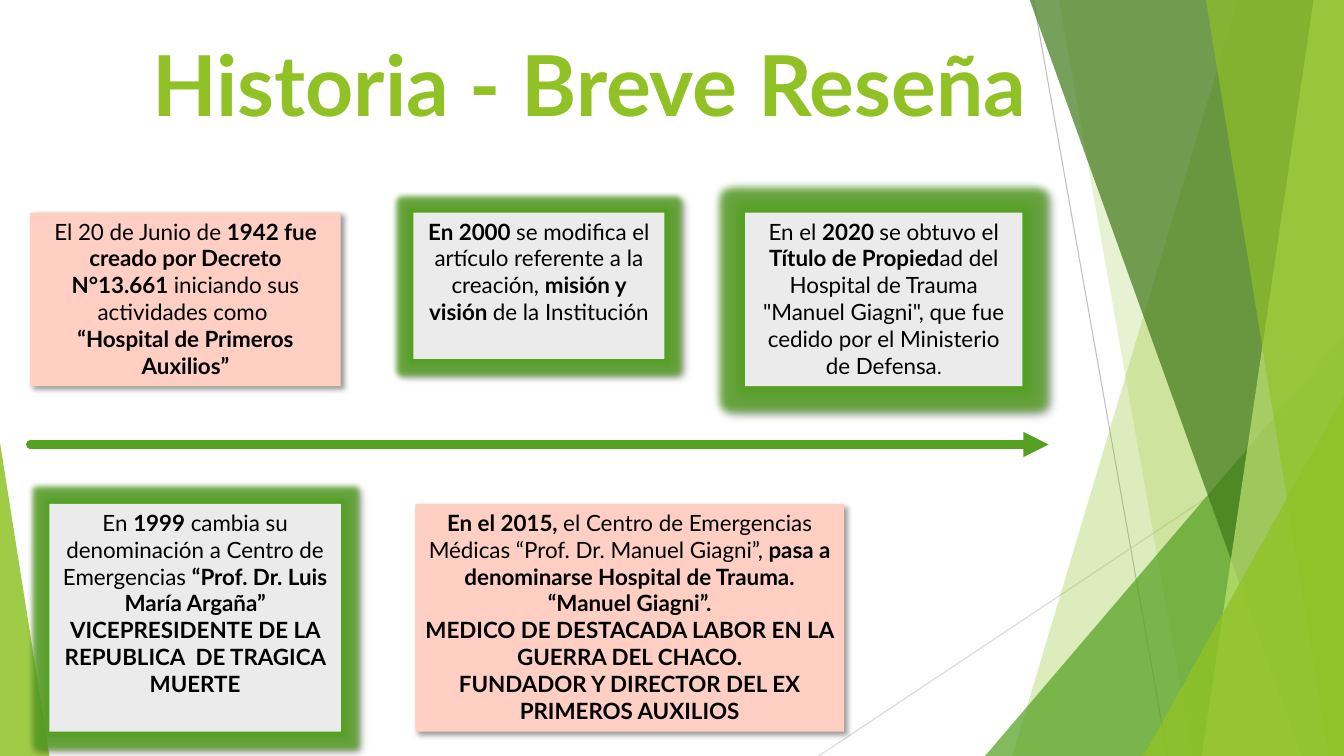
from lxml import etree
from pptx import Presentation
from pptx import util as u
from pptx.dml.color import RGBColor
from pptx.enum import shapes, text
from pptx.oxml import ns

FONT = "Lato"
LIME, GREEN, PINK, GRAY = "90C226", "54A021", "FECFC2", "EBEBEB"
TOP, BOTTOM, RIGHT = -0.01, 7.5, 13.33


def color(value):
    """Turn a hex string into a colour."""
    return RGBColor.from_string(value)


def add_element(parent, tag, **attributes):
    """Append a DrawingML element with the given attributes."""
    element = etree.SubElement(parent, ns.qn(tag))
    for name, value in attributes.items():
        element.set(name, str(value))
    return element


def add_tint(parent, value, opacity):
    """Append a colour with an opacity in percent."""
    tint = add_element(parent, "a:srgbClr", val=value)
    add_element(tint, "a:alpha", val=opacity * 1000)


def paint(shape, fill, opacity=100):
    """Give a shape a plain fill without line or shadow."""
    shape.shadow.inherit = False
    shape.line.fill.background()
    shape.fill.solid()
    shape.fill.fore_color.rgb = color(fill)
    if opacity < 100:
        tint = shape.fill._xPr.find(ns.qn("a:solidFill"))[0]
        add_element(tint, "a:alpha", val=opacity * 1000)


def add_band(slide, points, fill, opacity):
    """Draw a translucent polygon."""
    corners = [(u.Inches(x), u.Inches(y)) for x, y in points]
    builder = slide.shapes.build_freeform(*corners[0])
    builder.add_line_segments(corners[1:], close=True)
    paint(builder.convert_to_shape(), fill, opacity)


def add_triangle(slide, place, apex, fill, opacity):
    """Draw a translucent triangle with its apex at one side."""
    shape = slide.shapes.add_shape(
        shapes.MSO_SHAPE.ISOSCELES_TRIANGLE, *map(u.Inches, place))
    shape.adjustments[0] = apex
    paint(shape, fill, opacity)


def add_line(slide, start, end, line_color, width):
    """Draw a straight line without shadow."""
    line = slide.shapes.add_connector(
        shapes.MSO_CONNECTOR.STRAIGHT, *map(u.Inches, start + end))
    line.line.color.rgb = color(line_color)
    line.line.width = u.Pt(width)
    add_element(line._element.spPr, "a:effectLst")
    return line


def write(frame, paragraphs, size, text_color):
    """Write centred paragraphs made of (text, bold) runs."""
    frame.word_wrap = True
    frame.vertical_anchor = text.MSO_ANCHOR.TOP
    for index, runs in enumerate(paragraphs):
        paragraph = frame.paragraphs[0] if index == 0 else frame.add_paragraph()
        paragraph.alignment = text.PP_ALIGN.CENTER
        for words, bold in runs:
            run = paragraph.add_run()
            run.text = words
            run.font.name = FONT
            run.font.size = u.Pt(size)
            run.font.bold = bold
            run.font.color.rgb = color(text_color)


def add_event(slide, place, fill, paragraphs, glow=0):
    """Draw one event card with a shadow and an optional glow."""
    card = slide.shapes.add_shape(
        shapes.MSO_SHAPE.RECTANGLE, *map(u.Inches, place))
    paint(card, fill)
    effects = card._element.spPr.find(ns.qn("a:effectLst"))
    if glow:
        halo = add_element(effects, "a:glow", rad=u.Pt(glow))
        add_tint(halo, GREEN, 80)
    shadow = add_element(effects, "a:outerShdw", blurRad=u.Pt(4), dist=u.Pt(3),
                         dir=45 * 60000, algn="tl", rotWithShape=0)
    add_tint(shadow, "000000", 40)
    write(card.text_frame, paragraphs, 16, "000000")
    return card


def add_backdrop(slide):
    """Draw the green facets on both sides."""
    add_line(slide, (10.25, 0), (11.58, BOTTOM), "BFBFBF", 0.75)
    add_line(slide, (RIGHT, 4.03), (8.12, BOTTOM), "D9D9D9", 0.75)

    def facet(top_x, bottom_x, fill, opacity):
        add_band(slide, [(top_x, TOP), (RIGHT, TOP), (RIGHT, BOTTOM),
                         (bottom_x, BOTTOM)], fill, opacity)

    facet(12.28, 10.04, LIME, 30)
    facet(10.5, 11.83, LIME, 20)
    add_triangle(slide, (9.77, 3.33, 3.56, 4.17), 1, GREEN, 72)
    facet(10.21, 12.91, "3F7819", 70)
    facet(13.03, 11.92, "C0E474", 70)
    facet(11.96, 13.18, LIME, 65)
    add_triangle(slide, (11.34, 3.93, 1.99, 3.57), 1, LIME, 80)
    add_triangle(slide, (0, 4.39, 0.49, 3.11), 0, LIME, 85)


def add_title(slide, words):
    """Write the slide title."""
    box = slide.shapes.add_textbox(*map(u.Inches, (0.3, 0.27, 11.09, 1.75)))
    write(box.text_frame, [[(words, True)]], 60, LIME)


def add_events(slide):
    """Draw the cards above and below the time line."""
    upper, lower = 2.11, 5
    add_event(slide, (0.3, upper, 3.08, 1.72), PINK, [
        [("El 20 de Junio de ", False),
         ("1942 fue creado por Decreto N°13.661 ", True),
         ("iniciando sus actividades como ", False)],
        [("“Hospital de Primeros Auxilios”", True)]])
    add_event(slide, (0.49, lower, 2.89, 2.26), GRAY, [
        [("En ", False), ("1999", True),
         (" cambia su denominación a Centro de Emergencias ", False),
         ("“Prof. Dr. Luis María Argaña” VICEPRESIDENTE DE LA "
          "REPUBLICA  DE TRAGICA MUERTE", True)]], glow=8)
    add_event(slide, (4.1, upper, 2.49, 1.45), GRAY, [
        [("En 2000 ", True),
         ("se modifica el artículo referente a la creación, ", False),
         ("misión y visión ", True), ("de la Institución", False)]], glow=8)
    add_event(slide, (4.12, lower, 4.25, 2.26), PINK, [
        [("En el 2015, ", True),
         ("el Centro de Emergencias Médicas “Prof. Dr. Manuel Giagni”,", False),
         (" pasa a denominarse Hospital de Trauma. “Manuel Giagni”.", True)],
        [("MEDICO DE DESTACADA LABOR EN LA GUERRA DEL CHACO.", True)],
        [("FUNDADOR Y DIRECTOR DEL EX PRIMEROS AUXILIOS", True)]])
    title_card = add_event(slide, (7.39, upper, 2.75, 1.72), GRAY, [
        [("En el ", False), ("2020 ", True), ("se obtuvo el ", False),
         ("Título de Propied", True),
         ("ad del Hospital de Trauma \"Manuel Giagni\", que fue cedido "
          "por el Ministerio de Defensa", False), (".", False)]], glow=12)
    title_card.text_frame.paragraphs[0].runs[-1].font.size = u.Pt(14)


def add_time_line(slide):
    """Draw the thick arrow between the cards."""
    arrow = add_line(slide, (0.3, 4.41), (10.4, 4.41), GREEN, 6)
    outline = arrow.line._get_or_add_ln()
    outline.set("cap", "rnd")
    add_element(outline, "a:tailEnd", type="triangle")


def main():
    """Build and save the slide."""
    presentation = Presentation()
    presentation.slide_width = u.Inches(RIGHT)
    presentation.slide_height = u.Inches(BOTTOM)
    slide = presentation.slides.add_slide(presentation.slide_layouts[6])
    add_backdrop(slide)
    add_title(slide, "Historia - Breve Reseña")
    add_events(slide)
    add_time_line(slide)
    presentation.save("out.pptx")


if __name__ == "__main__":
    main()
